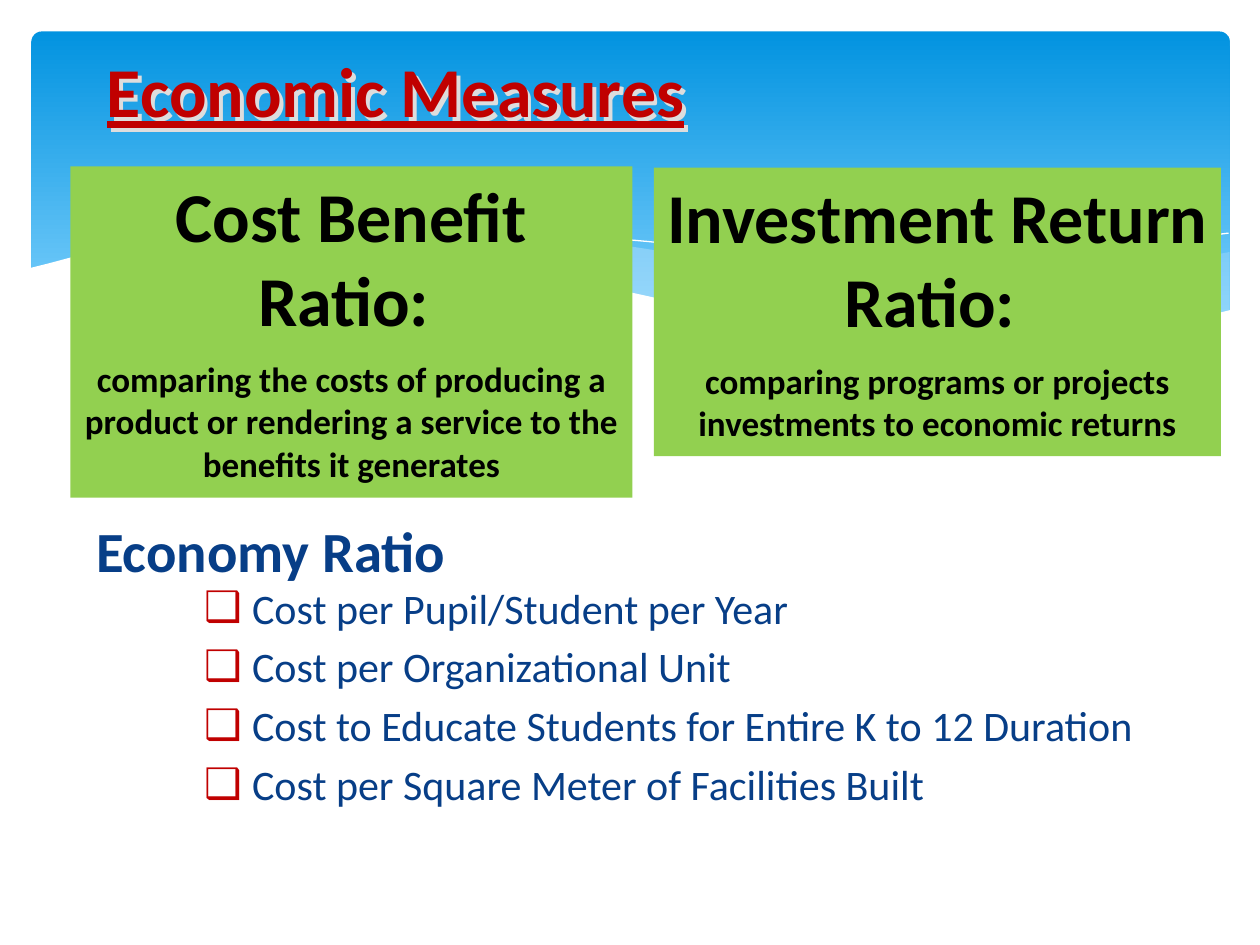
from lxml.etree import SubElement
from pptx import Presentation
from pptx.dml.color import RGBColor
from pptx.enum.shapes import MSO_SHAPE as Preset
from pptx.enum.text import MSO_ANCHOR as Anchor, MSO_AUTO_SIZE as AutoSize
from pptx.enum.text import PP_ALIGN as Align
from pptx.oxml.ns import qn
from pptx.util import Inches, Pt

FONT = "Calibri"
NAVY, RED, GREEN, BLACK, WHITE = "073E87", "C00000", "92D050", "000000", "FFFFFF"
PALE_BLUE, SHADOW = "C6E7FC", "DDDDDD"
BANNER_TOP, BANNER_BOTTOM = "0293E0", "83D3FE"

# Each curve: left end, right end, heights at equal steps between them (inches)
RIGHT_SWELL_TOP = (6.61, 9.76, [2.65, 2.5, 2.33, 2.15, 2])
RIGHT_SWELL_BASE = (6.61, 9.76, [2.65, 2.75, 2.78, 2.7, 2.47])
MIDDLE_SWELL_TOP = (2.86, 8.93, [1.91, 1.86, 1.94, 2.12, 2.36, 2.57, 2.73])
MIDDLE_SWELL_BASE = (2.86, 8.93, [1.91, 2.08, 2.31, 2.53, 2.69, 2.78, 2.73])
LONG_CREST = (3.09, 9.07, [1.95, 1.88, 2.04, 2.33, 2.72])
SHORT_CREST = (6.13, 9.75, [2.57, 2.26, 2.01, 1.85])
WHITE_WAVE = (0.23, 9.77, [2.13, 1.85, 1.87, 2.05, 2.32, 2.57, 2.73, 2.74, 2.46])
WHITE_WAVE_FLOOR = (0.23, 9.77, [3.29, 3.29])
CURVE_STEPS = 8

MEASURES = [
    ("Cost Benefit Ratio: ",
     "comparing the costs of producing a product or rendering a service "
     "to the benefits it generates", (0.56, 1.32, 4.46, 2.63)),
    ("Investment Return Ratio: ",
     "comparing programs or projects investments to economic returns",
     (5.19, 1.33, 4.5, 2.29)),
]
ECONOMY_RATIOS = [
    "Cost per Pupil/Student per Year",
    "Cost per Organizational Unit",
    "Cost to Educate Students for Entire K to 12 Duration",
    "Cost per Square Meter of Facilities Built",
]


def color(value):
    return RGBColor.from_string(value)


def paint(shape, shade):
    shape.shadow.inherit = False
    shape.line.fill.background()
    shape.fill.solid()
    shape.fill.fore_color.rgb = color(shade)


def place(shape, box):
    shape.left, shape.top, shape.width, shape.height = map(Inches, box)


def style(paragraph, size, ink, bold=False, align=Align.LEFT, gap=0):
    """Format a paragraph; gap is the space before as a share of its size."""
    font = paragraph.font
    font.name, font.size, font.bold = FONT, Pt(size), bold
    font.color.rgb = color(ink)
    paragraph.alignment = align
    paragraph.space_before = Pt(size * gap)


def smooth_curve(left, right, heights):
    """Points of a Catmull-Rom curve through equally spaced heights."""
    spans = len(heights) - 1
    # One extra height at each end continues the curve straight on
    padded = [2 * heights[0] - heights[1], *heights,
              2 * heights[-1] - heights[-2]]
    points = []
    for step in range(spans * CURVE_STEPS + 1):
        span = min(step // CURVE_STEPS, spans - 1)
        t = step / CURVE_STEPS - span
        before, start, end, after = padded[span:span + 4]
        y = start + t / 2 * (
            end - before
            + t * (2 * before - 5 * start + 4 * end - after)
            + t * t * (3 * start - before - 3 * end + after))
        x = left + (right - left) * step / (spans * CURVE_STEPS)
        points.append((Inches(x), Inches(y)))
    return points


def add_outline(slide, points, closed):
    builder = slide.shapes.build_freeform(*points[0])
    builder.add_line_segments(points[1:], close=closed)
    return builder.convert_to_shape()


def add_wave(slide, top, base, shade, opacity=100):
    """Fill the area between two curves."""
    outline = smooth_curve(*top) + smooth_curve(*base)[::-1]
    wave = add_outline(slide, outline, closed=True)
    paint(wave, shade)
    if opacity < 100:
        rgb = wave._element.spPr.find(".//" + qn("a:srgbClr"))
        SubElement(rgb, qn("a:alpha"), val=str(opacity * 1000))


def add_crest(slide, curve):
    crest = add_outline(slide, smooth_curve(*curve), closed=False)
    crest.shadow.inherit = False
    crest.fill.background()
    crest.line.color.rgb = color(WHITE)
    crest.line.width = 0


def add_banner(slide):
    banner = slide.shapes.add_shape(
        Preset.ROUNDED_RECTANGLE, *map(Inches, (0.25, 0.25, 9.51, 2.7)))
    banner.adjustments[0] = 0.03
    paint(banner, BANNER_TOP)
    banner.fill.gradient()
    banner.fill.gradient_angle = 270
    top, bottom = banner.fill.gradient_stops
    top.position, top.color.rgb = 0, color(BANNER_TOP)
    bottom.position, bottom.color.rgb = 0.9, color(BANNER_BOTTOM)


def add_heading(slide, text):
    heading = slide.shapes.add_textbox(*map(Inches, (0.75, 0.33, 5.67, 0.77)))
    heading.text_frame.word_wrap = True
    heading.text_frame.text = text
    paragraph = heading.text_frame.paragraphs[0]
    style(paragraph, 40, RED, bold=True)
    paragraph.font.underline = True
    # The box has no fill, so its shadow falls from the letters
    effects = SubElement(heading._element.spPr, qn("a:effectLst"))
    shadow = SubElement(effects, qn("a:outerShdw"), blurRad="0",
                        dist=str(Pt(3.2)), dir="2700000", algn="tl")
    SubElement(shadow, qn("a:srgbClr"), val=SHADOW)


def add_measure(slide, name, meaning, box):
    card = slide.shapes.add_shape(Preset.RECTANGLE, *map(Inches, box))
    paint(card, GREEN)
    frame = card.text_frame
    frame.word_wrap = True
    frame.vertical_anchor = Anchor.TOP
    frame.text = f"{name}\n{meaning}"
    name_line, meaning_line = frame.paragraphs
    style(name_line, 40, BLACK, True, Align.CENTER)
    style(meaning_line, 20, BLACK, True, Align.CENTER, gap=0.5)


def fill_title(title, text):
    place(title, (0.36, 4.07, 3.58, 0.58))
    frame = title.text_frame
    frame.text = text
    frame.auto_size = AutoSize.NONE
    frame.vertical_anchor = Anchor.MIDDLE
    style(frame.paragraphs[0], 32.4, NAVY, True, Align.CENTER)


def add_box_bullet(paragraph):
    props = paragraph._p.get_or_add_pPr()
    props.set("marL", str(Inches(0.71)))
    props.set("indent", str(-Inches(0.38)))
    bullet_color = SubElement(props, qn("a:buClr"))
    SubElement(bullet_color, qn("a:srgbClr"), val=RED)
    bullet = SubElement(props, qn("a:buChar"), char="❑")
    # The schema wants bullets right after the spacing
    props.find(qn("a:spcBef")).addnext(bullet_color)
    bullet_color.addnext(bullet)


def fill_checklist(body, items):
    place(body, (1.19, 4.57, 8.5, 2.08))
    frame = body.text_frame
    frame.text = "\n".join(items)
    frame.auto_size = AutoSize.NONE
    for paragraph in frame.paragraphs:
        paragraph.level = 1
        style(paragraph, 24, NAVY, gap=0.2)
        add_box_bullet(paragraph)


def main():
    prs = Presentation()
    prs.slide_width, prs.slide_height = Inches(10), Inches(7.5)
    slide = prs.slides.add_slide(prs.slide_layouts[1])

    # Banner, cut off below by the white wave
    add_banner(slide)
    add_wave(slide, RIGHT_SWELL_TOP, RIGHT_SWELL_BASE, PALE_BLUE, opacity=29)
    add_wave(slide, MIDDLE_SWELL_TOP, MIDDLE_SWELL_BASE, PALE_BLUE, opacity=40)
    for crest in (LONG_CREST, SHORT_CREST):
        add_crest(slide, crest)
    add_wave(slide, WHITE_WAVE, WHITE_WAVE_FLOOR, WHITE)

    # Measures
    add_heading(slide, "Economic Measures")
    for name, meaning, box in MEASURES:
        add_measure(slide, name, meaning, box)

    # Economy ratio list
    fill_title(slide.shapes.title, "Economy Ratio")
    fill_checklist(slide.placeholders[1], ECONOMY_RATIOS)
    prs.save("out.pptx")


if __name__ == "__main__":
    main()
